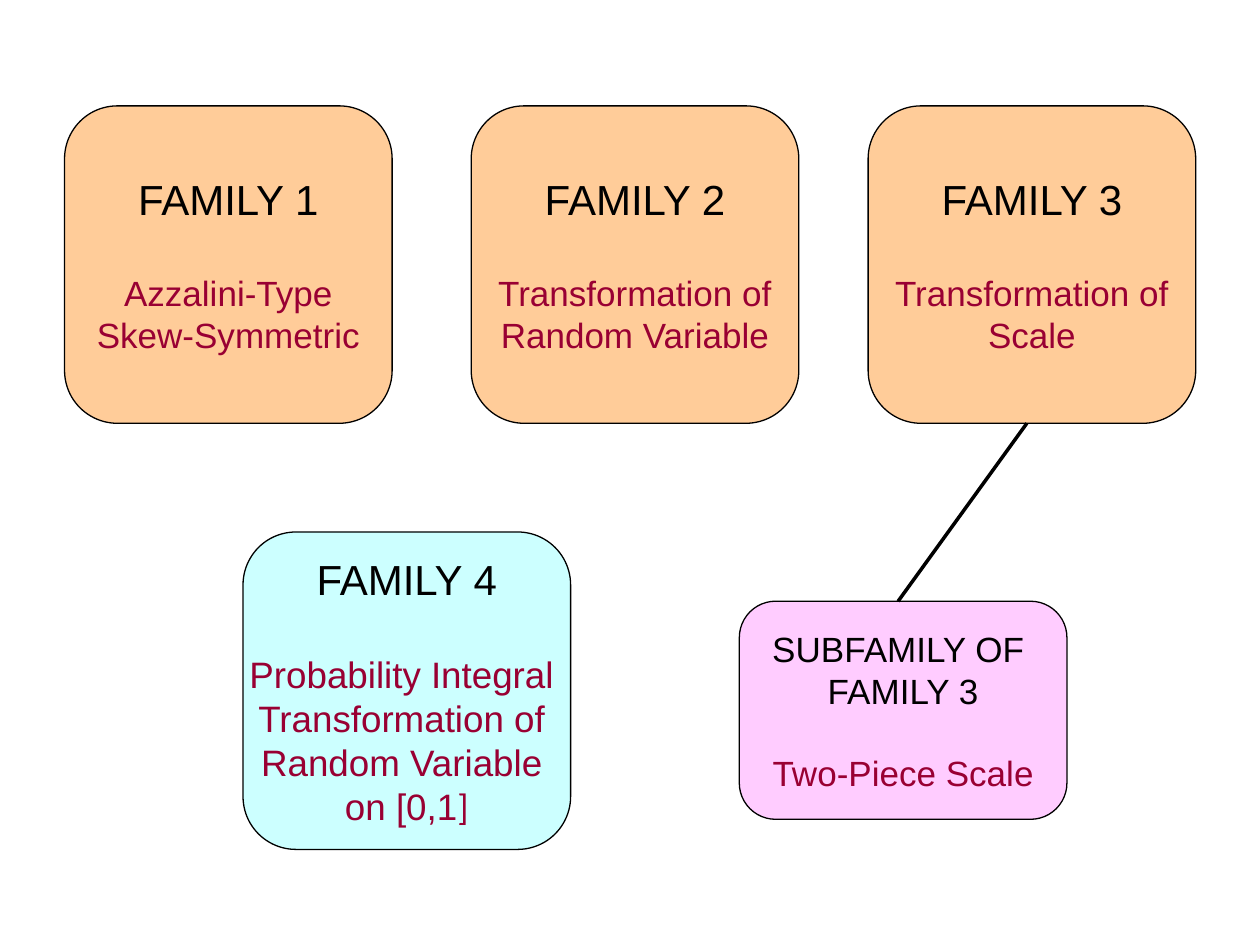
import pptx
import pptx.dml.color
import pptx.enum.shapes
import pptx.enum.text
import pptx.oxml.ns
import pptx.util
from lxml import etree

Pt = pptx.util.Pt

COLORS = {
    "orange": "FFCC99",
    "pink": "FFCCFF",
    "cyan": "CCFFFF",
    "heading": "000000",
    "detail": "990033",
    "line": "000000",
}
BOX_WIDTH = 187.2
FAMILY_HEIGHT = 181.4
SUBFAMILY_HEIGHT = 124.6
TOP_ROW = 60.5
LINE_SPACING = 1.15  # natural line height of Arial, relative to its size


def color(name):
    return pptx.dml.color.RGBColor.from_string(COLORS[name])


def add_line_of_text(paragraph, pieces, size, color_name):
    """Fill a centred paragraph with (text, font name) pieces."""
    paragraph.alignment = pptx.enum.text.PP_ALIGN.CENTER
    for text, font_name in pieces:
        run = paragraph.add_run()
        run.text = text
        for attribute, value in {"name": font_name, "size": Pt(size)}.items():
            setattr(run.font, attribute, value)
        run.font.color.rgb = color(color_name)


def add_family(slide, box, fill, headings, details, heading_size=24, detail_size=20):
    """Place a rounded box with headings, a one-line gap and detail lines."""
    shape = slide.shapes.add_shape(
        pptx.enum.shapes.MSO_SHAPE.FLOWCHART_ALTERNATE_PROCESS, *map(Pt, box))
    shape.shadow.inherit = False
    shape.fill.solid()
    shape.fill.fore_color.rgb = color(fill)
    shape.line.color.rgb = color("line")
    shape.line.width = Pt(0.75)

    frame = shape.text_frame
    frame.word_wrap = False
    frame.vertical_anchor = pptx.enum.text.MSO_ANCHOR.MIDDLE
    lines = [(text, heading_size, "heading") for text in headings]
    lines += [(text, detail_size, "detail") for text in details]
    for index, (text, size, color_name) in enumerate(lines):
        paragraph = frame.add_paragraph() if index else frame.paragraphs[0]
        pieces = [(text, "Arial")] if isinstance(text, str) else text
        add_line_of_text(paragraph, pieces, size, color_name)
        if index == len(headings):
            paragraph.space_before = Pt(round(heading_size * LINE_SPACING, 1))


def add_link(slide, start, end):
    connector = slide.shapes.add_connector(
        pptx.enum.shapes.MSO_CONNECTOR.STRAIGHT, *map(Pt, start + end))
    connector.line.color.rgb = color("line")
    connector.line.width = Pt(2)
    etree.SubElement(connector._element.spPr, pptx.oxml.ns.qn("a:effectLst"))


def main():
    presentation = pptx.Presentation()
    presentation.slide_width, presentation.slide_height = Pt(720), Pt(540)
    slide = presentation.slides.add_slide(presentation.slide_layouts[6])

    top_families = [
        (36.9, "FAMILY 1", ["Azzalini-Type", "Skew-Symmetric"]),
        (269.3, "FAMILY 2", ["Transformation of", "Random Variable"]),
        (496.1, "FAMILY 3", ["Transformation of", "Scale"]),
    ]
    for left, heading, details in top_families:
        box = (left, TOP_ROW, BOX_WIDTH, FAMILY_HEIGHT)
        add_family(slide, box, "orange", [heading], details)

    subfamily_top = 343.6
    add_family(slide, (422.5, subfamily_top, BOX_WIDTH, SUBFAMILY_HEIGHT), "pink",
               ["SUBFAMILY OF ", "FAMILY 3"], ["Two-Piece Scale"], heading_size=20)
    add_link(slide, (586.8, TOP_ROW + FAMILY_HEIGHT), (513.2, subfamily_top))

    add_family(slide, (138.9, 304, BOX_WIDTH, FAMILY_HEIGHT), "cyan", ["FAMILY 4"],
               ["Probability Integral ", "Transformation of ", "Random Variable ",
                [("on [0,1", "Arial"), ("]", "Calibri")]], detail_size=21)

    presentation.save("out.pptx")


if __name__ == "__main__":
    main()
